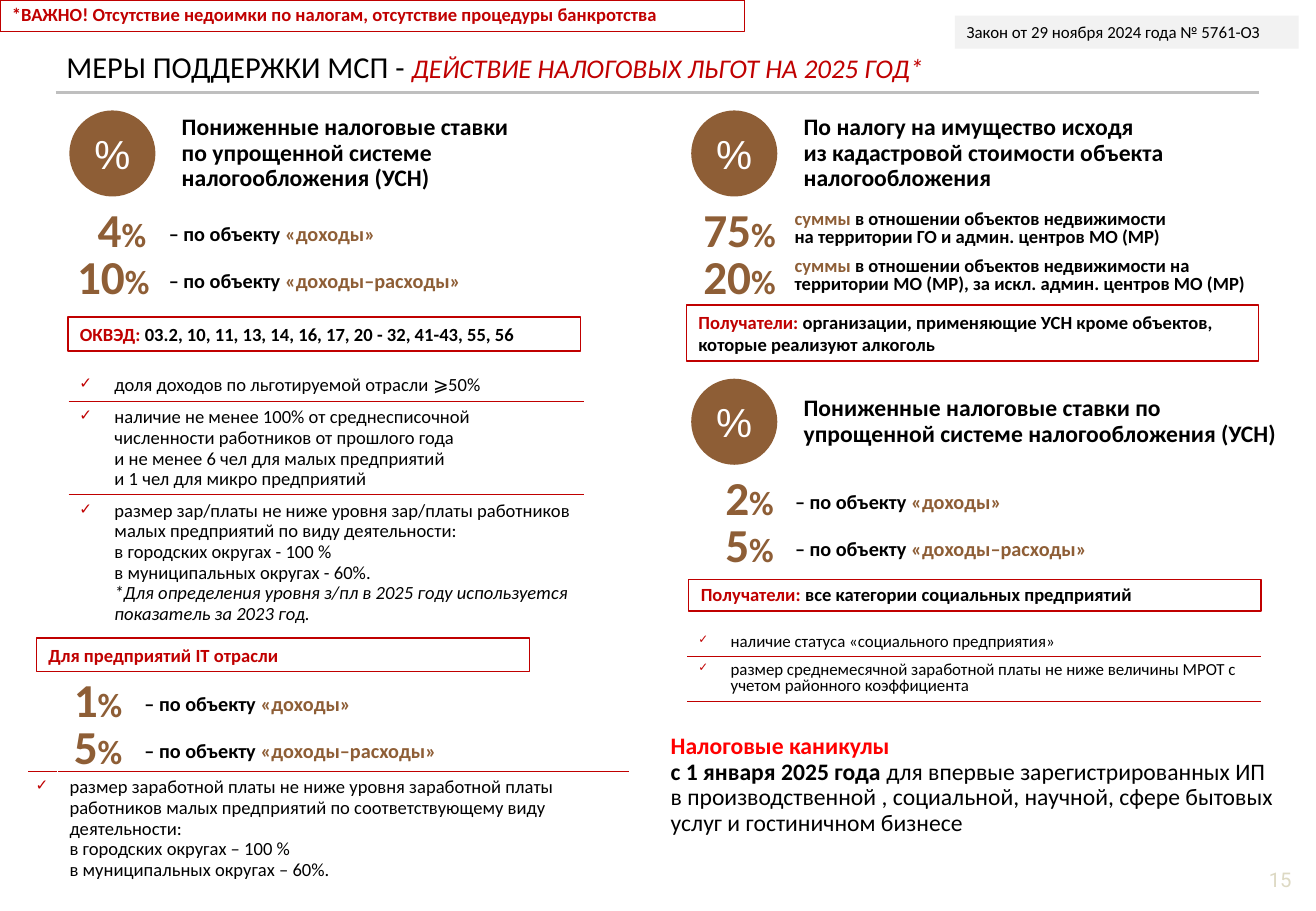
from lxml.etree import SubElement
from pptx import Presentation
from pptx.dml.color import RGBColor
from pptx.enum.shapes import MSO_CONNECTOR as Connector, MSO_SHAPE as Shape
from pptx.enum.text import MSO_ANCHOR as Anchor, PP_ALIGN as Align
from pptx.oxml import parse_xml
from pptx.oxml.ns import nsdecls, qn
from pptx.util import Cm, Pt

THEME = {
    "font": "Calibri", "brown": "8E5E36", "red": "C00000", "law": "F2F2F2", "rule": "BFBFBF",
    # style: size, colour, bold, italic, font
    "styles": {
        "title": (18, "000000", False, False, "Calibri"),
        "subtitle": (16, "C00000", False, True, "Calibri"),
        "heading": (14, "000000", True, False, "Calibri"),
        "alert": (14, "FF0000", True, False, "Calibri"),
        "body": (14, "000000", False, False, "Calibri"),
        "icon": (24, "FFFFFF", False, False, "Arial"),
        "rate": (28, "8E5E36", True, False, "Calibri"),
        "percent": (20, "8E5E36", True, False, "Calibri"),
        "label": (12, "000000", True, False, "Calibri"),
        "object": (12, "8E5E36", True, False, "Calibri"),
        "sum": (11, "8E5E36", True, False, "Calibri"),
        "strong": (11, "000000", True, False, "Calibri"),
        "key": (11, "C00000", True, False, "Calibri"),
        "item": (11, "000000", False, False, "Calibri"),
        "remark": (11, "000000", False, True, "Calibri"),
        "small": (10, "000000", False, False, "Calibri"),
        "tick": (9, "C00000", False, False, "Calibri"),
        "small_tick": (7, "C00000", False, False, "Calibri"),
        "number": (12, "DDD9C3", False, False, "Roboto"),
    },
}

# Content: a paragraph is a list of (text, style); positions are in cm
TITLE = [[("МЕРЫ ПОДДЕРЖКИ МСП - ", "title"),
          ("ДЕЙСТВИЕ НАЛОГОВЫХ ЛЬГОТ НА 2025 ГОД*", "subtitle")]]
HOLIDAYS = [[("Налоговые каникулы", "alert")],
            [("с 1 января 2025 года ", "heading"),
             ("для впервые зарегистрированных ИП в производственной , социальной, научной, "
              "сфере бытовых услуг и гостиничном бизнесе", "body")]]
LAW = [[("Закон от 29 ноября 2024 года № 5761-ОЗ", "small")]]
PAGE = [[("15", "number")]]

# icon left, icon top, heading width, lines
MEASURES = [
    (1.45, 2.31, 7.9, ["Пониженные налоговые ставки",
                       "по упрощенной системе налогообложения (УСН)"]),
    (14.45, 2.31, 9.37, ["По налогу на имущество исходя",
                         "из кадастровой стоимости объекта налогообложения"]),
    (14.45, 7.92, 10.57, ["Пониженные налоговые ставки по упрощенной системе "
                          "налогообложения (УСН)"]),
]

INCOME = [[("– по объекту ", "label"), ("«доходы»", "object")]]
PROFIT = [[("– по объекту ", "label"), ("«доходы–расходы»", "object")]]
CENTRES = [[("суммы", "sum"), (" в отношении объектов недвижимости", "strong")],
           [("на территории ГО и админ. центров МО (МР)", "strong")]]
OUTSIDE = [[("суммы", "sum"),
            (" в отношении объектов недвижимости на территории МО (МР), "
             "за искл. админ. центров МО (МР)", "strong")]]

# top, label left, label width, label drop, line spacing, (rate, centre, label)
RATES = [
    (4.06, 3.28, 6.71, 0.44, 1, [("4", 2.55, INCOME), ("10", 2.37, PROFIT)]),
    (13.89, 2.77, 6.71, 0.44, 1, [("1", 2.05, INCOME), ("5", 2.05, PROFIT)]),
    (4.06, 16.36, 10, 0.36, 0.8, [("75", 15.46, CENTRES), ("20", 15.46, OUTSIDE)]),
    (9.67, 16.37, 6.71, 0.44, 1, [("2", 15.67, INCOME), ("5", 15.67, PROFIT)]),
]

# left, top, width, height, line spacing, runs
FRAMES = [
    (0, 0, 15.57, 0.66, 0.9,
     [("*ВАЖНО! Отсутствие недоимки по налогам, отсутствие процедуры банкротства", "key")]),
    (1.42, 6.63, 10.72, 0.71, 1,
     [("ОКВЭД: ", "key"), ("03.2, 10, 11, 13, 14, 16, 17, 20 - 32, 41-43, 55, 56", "strong")]),
    (0.76, 13.34, 10.31, 0.71, 1, [("Для предприятий IT отрасли", "key")]),
    (14.35, 6.38, 11.96, 1.17, 1,
     [("Получатели: ", "key"),
      ("организации, применяющие УСН кроме объектов, которые реализуют алкоголь", "strong")]),
    (14.4, 12.12, 11.96, 0.66, 0.9,
     [("Получатели: ", "key"), ("все категории социальных предприятий", "strong")]),
]

# left, top, column widths, line spacing, tick style, ruled boundaries, (height, paragraphs)
CONDITIONS = [
    (1.45, 7.72, (0.69, 10.06), 0.9, "tick", {1, 2}, [
        (0.67, [[("доля доходов по льготируемой отрасли ⩾50%", "item")]]),
        (1.95, [[("наличие не менее 100% от среднесписочной численности работников "
                  "от прошлого года", "item")],
                [("и не менее 6 чел для малых предприятий", "item")],
                [("и 1 чел для микро предприятий", "item")]]),
        (2.77, [[("размер зар/платы не ниже уровня зар/платы работников малых предприятий "
                  "по виду деятельности:", "item")],
                [("в городских округах - 100 %", "item")],
                [("в муниципальных округах - 60%.", "item")],
                [("*Для определения уровня з/пл в 2025 году используется показатель "
                  "за 2023 год.", "remark")]])]),
    (14.38, 13.13, (0.64, 11.33), 0.8, "small_tick", {1, 2}, [
        (0.58, [[("наличие статуса «социального предприятия»", "small")]]),
        (0.94, [[("размер среднемесячной заработной платы не ниже величины МРОТ c учетом "
                  "районного коэффициента", "small")]])]),
    (0.56, 16.13, (0.64, 11.96), 0.9, "tick", {0}, [
        (2.36, [[("размер заработной платы не ниже уровня заработной платы работников малых "
                  "предприятий по соответствующему виду деятельности:", "item")],
                [("в городских округах – 100 %", "item")],
                [("в муниципальных округах – 60%.", "item")]])]),
]

ICON, HEADING_SHIFT = 1.8, 2.1
RATE_WIDTH, RATE_HEIGHT, RATE_STEP, LABEL_HEIGHT = 2.31, 1.37, 0.98, 0.76

deck = Presentation()
deck.slide_width, deck.slide_height = Cm(27.51), Cm(19.05)
slide = deck.slides.add_slide(deck.slide_layouts[6])


def colour(code):
    return RGBColor.from_string(code)


def write(frame, paragraphs, spacing=1, align=Align.LEFT):
    for index, parts in enumerate(paragraphs):
        paragraph = frame.add_paragraph() if index else frame.paragraphs[0]
        paragraph.alignment, paragraph.line_spacing = align, spacing
        for text, style in parts:
            run = paragraph.add_run()
            run.text = text
            size, tint, run.font.bold, run.font.italic, run.font.name = THEME["styles"][style]
            run.font.size, run.font.color.rgb = Pt(size), colour(tint)


def add_text(box, paragraphs, spacing=1, align=Align.LEFT, anchor=Anchor.MIDDLE):
    frame = slide.shapes.add_textbox(*map(Cm, box)).text_frame
    frame.word_wrap, frame.vertical_anchor = True, anchor
    write(frame, paragraphs, spacing, align)


def add_panel(kind, box, paragraphs, fill=None, line=None, spacing=1,
              align=Align.LEFT, anchor=Anchor.TOP):
    panel = slide.shapes.add_shape(kind, *map(Cm, box))
    panel.shadow.inherit = False
    if fill:
        panel.fill.solid()
        panel.fill.fore_color.rgb = colour(fill)
    else:
        panel.fill.background()
    if line:
        panel.line.color.rgb, panel.line.width = colour(line), Pt(0)
    else:
        panel.line.fill.background()
    panel.text_frame.word_wrap, panel.text_frame.vertical_anchor = True, anchor
    write(panel.text_frame, paragraphs, spacing, align)


def add_border(cell, sides):
    properties = cell._tc.get_or_add_tcPr()
    for position, side in enumerate(sides):
        properties.insert(position, parse_xml(
            f'<a:{side} {nsdecls("a")} w="{Pt(0.96)}"><a:solidFill>'
            f'<a:srgbClr val="{THEME["red"]}"/></a:solidFill></a:{side}>'))


def add_conditions(left, top, widths, spacing, tick, ruled, rows):
    height = sum(row[0] for row in rows)
    table = slide.shapes.add_table(len(rows), 2, Cm(left), Cm(top),
                                   Cm(sum(widths)), Cm(height)).table
    table.first_row = table.horz_banding = False
    for column, width in zip(table.columns, widths):
        column.width = Cm(width)
    for index, (row_height, paragraphs) in enumerate(rows):
        table.rows[index].height = Cm(row_height)
        mark, condition = table.rows[index].cells
        mark.margin_left = mark.margin_right = Cm(0.1)
        write(mark.text_frame, [[("✓", tick)]], spacing, Align.CENTER)
        write(condition.text_frame, paragraphs, spacing)
        sides = [side for side, edge in (("lnT", index), ("lnB", index + 1)) if edge in ruled]
        for cell in (mark, condition):
            cell.fill.background()
            add_border(cell, sides)


# Title and its rule
add_text((1.14, 0.91, 25.35, 0.97), TITLE)
rule = slide.shapes.add_connector(Connector.STRAIGHT, Cm(1.17), Cm(1.93), Cm(26.31), Cm(1.93))
rule.line.color.rgb, rule.line.width = colour(THEME["rule"]), Pt(1.5)
SubElement(rule._element.spPr, qn("a:effectLst"))

# Law reference and framed notes
add_panel(Shape.RECTANGLE, (19.96, 0.33, 7.19, 0.69), LAW, fill=THEME["law"])
for *box, spacing, parts in FRAMES:
    add_panel(Shape.RECTANGLE, box, [parts], line=THEME["red"], spacing=spacing)

# Measures with percent icons
for left, top, width, lines in MEASURES:
    add_panel(Shape.OVAL, (left, top, ICON, ICON), [[("%", "icon")]], fill=THEME["brown"],
              align=Align.CENTER, anchor=Anchor.MIDDLE)
    add_text((left + HEADING_SHIFT, top, width, ICON),
             [[(line, "heading")] for line in lines], 0.9)

# Rates
for top, label_left, label_width, drop, spacing, rates in RATES:
    for index, (rate, centre, label) in enumerate(rates):
        y = top + index * RATE_STEP
        add_text((centre - RATE_WIDTH / 2, y, RATE_WIDTH, RATE_HEIGHT),
                 [[(rate, "rate"), ("%", "percent")]], align=Align.CENTER, anchor=Anchor.TOP)
        add_text((label_left, y + drop, label_width, LABEL_HEIGHT), label, spacing)

# Conditions
for conditions in CONDITIONS:
    add_conditions(*conditions)

# Tax holidays and page number
add_text((13.77, 15.32, 13.21, 2.21), HOLIDAYS, 0.9)
add_text((20.85, 17.88, 6.4, 1.02), PAGE, align=Align.RIGHT)

deck.save("out.pptx")
